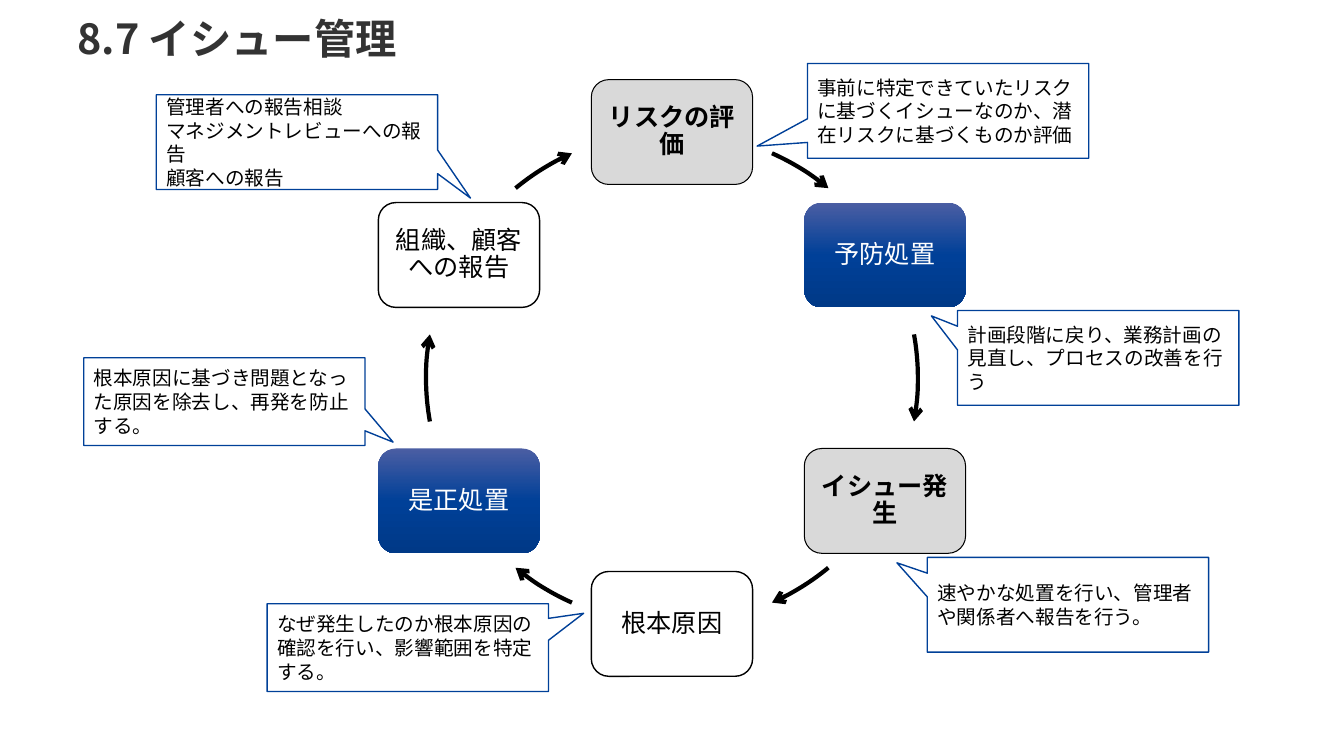
import copy
import math
from dataclasses import dataclass

from lxml import etree
from pptx import Presentation
from pptx import util as u
from pptx.dml.color import RGBColor
from pptx.enum import shapes, text
from pptx.oxml.ns import qn


@dataclass(frozen=True)
class Theme:
    title_font: str = "Noto Sans CJK JP"
    body_font: str = "Karla"
    title_size: float = 29.5
    step_size: float = 18
    note_size: float = 14
    heading: str = "333333"
    black: str = "000000"
    white: str = "FFFFFF"
    grey: str = "D9D9D9"
    blue: str = "004098"
    gradient: tuple = ((0, "4B5EA3"), (0.5, "004098"), (1, "003987"))


THEME = Theme()
WIDTH, HEIGHT = u.Inches(13.333), u.Inches(7.5)

# The cycle, in hundredths of the slide (columns across, rows down)
STEP_COLUMNS, STEP_ROWS = 12, 13.87
RADIUS_ROWS = 32.53
NOTE_COLUMNS = 20.93

# Step styles: fill (None = gradient), line width, text colour, bold
STYLES = {
    "event": (THEME.grey, 0.75, THEME.black, True),
    "action": (None, 0, THEME.white, False),
    "plain": (THEME.white, 1, THEME.black, False),
}
# Clockwise from the top
STEPS = [
    ("リスクの評価", "event"),
    ("予防処置", "action"),
    ("イシュー発生", "event"),
    ("根本原因", "plain"),
    ("是正処置", "action"),
    ("組織、顧客への報告", "plain"),
]
# Start and end of each arrow in degrees from the top; repeats after half a turn
ARROWS = [(24, 39.5), (79.8, 100.2), (140.5, 156)]

# Column, row, height in rows, pointer tip, wording
NOTES = [
    (11.63, 12.53, 12.53, (0.617, 0.591),
     "管理者への報告相談\nマネジメントレビューへの報告\n顧客への報告"),
    (60.08, 8.4, 12.53, (-0.679, 0.372),
     "事前に特定できていたリスクに基づくイシューなのか、潜在リスクに基づくものか評価"),
    (71.25, 41.07, 12.53, (-0.593, -0.443),
     "計画段階に戻り、業務計画の見直し、プロセスの改善を行う"),
    (69, 73.73, 12.53, (-0.608, -0.443),
     "速やかな処置を行い、管理者や関係者へ報告を行う。"),
    (6.23, 47.33, 11.6, (0.6, 0.462),
     "根本原因に基づき問題となった原因を除去し、再発を防止する。"),
    (19.88, 79.87, 11.6, (0.625, -0.391),
     "なぜ発生したのか根本原因の確認を行い、影響範囲を特定する。"),
]


def columns(count):
    return int(WIDTH * count / 100)


def rows(count):
    return int(HEIGHT * count / 100)


def colour(value):
    return RGBColor.from_string(value)


def write(box, wording, font, size, ink, bold=False, align=text.PP_ALIGN.LEFT):
    frame = box.text_frame
    frame.word_wrap = True
    frame.auto_size = text.MSO_AUTO_SIZE.NONE
    frame.vertical_anchor = text.MSO_ANCHOR.MIDDLE
    frame.text = wording
    for para in frame.paragraphs:
        para.alignment = align
        for span in para.runs:
            span.font.name = font
            span.font.size = u.Pt(size)
            span.font.bold = bold
            span.font.color.rgb = colour(ink)
            east_asian = etree.SubElement(span.font._element, qn("a:ea"))
            east_asian.set("typeface", font)


def add_box(page, kind, place, fill, line, width):
    box = page.shapes.add_shape(kind, *place)
    box.shadow.inherit = False
    if fill:
        box.fill.solid()
        box.fill.fore_color.rgb = colour(fill)
    else:
        box.fill.background()
    if width:
        box.line.color.rgb = colour(line)
        box.line.width = u.Pt(width)
    else:
        box.line.fill.background()
    return box


def shade(box):
    box.fill.gradient()
    box.fill.gradient_angle = 270
    stop_list = box._element.spPr.find(".//" + qn("a:gsLst"))
    stop_list.append(copy.deepcopy(stop_list[-1]))
    for stop, (position, value) in zip(box.fill.gradient_stops, THEME.gradient):
        stop.position = position
        stop.color.rgb = colour(value)


def add_title(page, wording):
    title = page.shapes.title
    title.left, title.top = columns(5), rows(0.93)
    title.width, title.height = columns(90), rows(8.13)
    write(title, wording, THEME.title_font, THEME.title_size, THEME.heading, True)


def add_step(page, index, wording, style):
    fill, line_width, ink, bold = STYLES[style]
    angle = math.radians(index * 360 / len(STEPS))
    width, height, radius = columns(STEP_COLUMNS), rows(STEP_ROWS), rows(RADIUS_ROWS)
    left = int((WIDTH - width) / 2 + radius * math.sin(angle))
    top = int((HEIGHT - height) / 2 - radius * math.cos(angle))
    box = add_box(page, shapes.MSO_SHAPE.ROUNDED_RECTANGLE,
                  (left, top, width, height), fill, THEME.black, line_width)
    if fill is None:
        shade(box)
    write(box, wording, THEME.body_font, THEME.step_size, ink, bold, text.PP_ALIGN.CENTER)
    frame = box.text_frame
    frame.margin_left = frame.margin_right = u.Inches(0.07)
    frame.margin_top = frame.margin_bottom = u.Inches(0.07)
    frame.paragraphs[0].line_spacing = 0.9


def add_arrow(page, index):
    half_turn, position = divmod(index, len(ARROWS))
    radius = rows(RADIUS_ROWS)
    place = (WIDTH // 2 - radius, HEIGHT // 2 - radius, 2 * radius, 2 * radius)
    arc = add_box(page, shapes.MSO_SHAPE.ARC, place, None, THEME.black, 3)
    for end, degrees in enumerate(ARROWS[position]):
        # Arc angles run clockwise from the right, in units of 5/3 degree
        arc.adjustments[end] = (degrees + 180 * half_turn - 90) % 360 * 0.6
    outline = arc._element.spPr.find(qn("a:ln"))
    etree.SubElement(outline, qn("a:tailEnd")).set("type", "arrow")


def add_note(page, column, row, height, tip, wording):
    place = (columns(column), rows(row), columns(NOTE_COLUMNS), rows(height))
    box = add_box(page, shapes.MSO_SHAPE.RECTANGULAR_CALLOUT, place,
                  THEME.white, THEME.blue, 1)
    box.adjustments[0], box.adjustments[1] = tip
    write(box, wording, THEME.body_font, THEME.note_size, THEME.black)


def main():
    deck = Presentation()
    deck.slide_width, deck.slide_height = WIDTH, HEIGHT
    page = deck.slides.add_slide(deck.slide_layouts[5])
    add_title(page, "8.7 イシュー管理")
    # Cycle of steps, each followed by its arrow
    for index, (wording, style) in enumerate(STEPS):
        add_step(page, index, wording, style)
        add_arrow(page, index)
    # Explanations around the cycle
    for note in NOTES:
        add_note(page, *note)
    deck.save("out.pptx")


if __name__ == "__main__":
    main()
